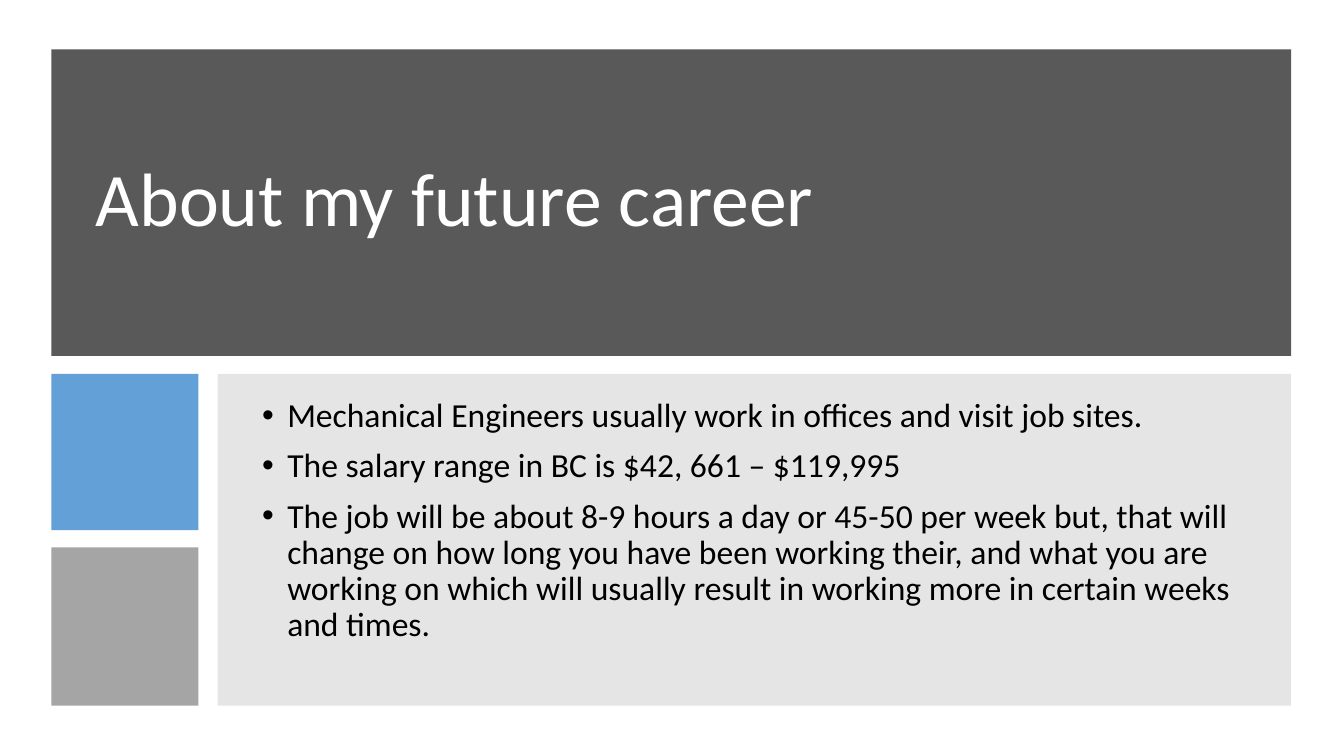
import pptx
import pptx.dml.color
import pptx.enum.shapes
import pptx.enum.text
import pptx.util
from lxml import etree
from pptx.oxml.ns import qn

Pt = pptx.util.Pt
RGBColor = pptx.dml.color.RGBColor
Anchor = pptx.enum.text.MSO_ANCHOR

WHITE = RGBColor(0xFF, 0xFF, 0xFF)
BLACK = RGBColor(0x00, 0x00, 0x00)
CHARCOAL = RGBColor(0x59, 0x59, 0x59)
BLUE = RGBColor(0x5B, 0x9B, 0xD5)
SILVER = RGBColor(0xA5, 0xA5, 0xA5)
GREY = RGBColor(0x80, 0x80, 0x80)

FONT = "Calibri"
CAREER_FACTS = [
    "Mechanical Engineers usually work in offices and visit job sites.",
    "The salary range in BC is $42, 661 – $119,995",
    "The job will be about 8-9 hours a day or 45-50 per week but, that will "
    "change on how long you have been working their, and what you are working "
    "on which will usually result in working more in certain weeks and times.",
]


def add_panel(slide, left, top, width, height, color, opacity=100):
    """Draw a plain rectangle, opacity in percent."""
    panel = slide.shapes.add_shape(
        pptx.enum.shapes.MSO_SHAPE.RECTANGLE,
        Pt(left), Pt(top), Pt(width), Pt(height))
    panel.shadow.inherit = False
    panel.line.fill.background()
    panel.fill.solid()
    panel.fill.fore_color.rgb = color
    if opacity < 100:
        fill_color = panel.fill._xPr.find(qn("a:solidFill"))[0]
        etree.SubElement(fill_color, qn("a:alpha"), val=str(opacity * 1000))


def fill_placeholder(slide, holder, box, lines, size, color, anchor):
    """Place the holder above the panels and write one paragraph per line."""
    slide.shapes._spTree.append(holder._element)
    holder.left, holder.top, holder.width, holder.height = map(Pt, box)
    frame = holder.text_frame
    frame.text = "\n".join(lines)
    frame.word_wrap = True
    frame.auto_size = pptx.enum.text.MSO_AUTO_SIZE.NONE
    frame.vertical_anchor = anchor
    for paragraph in frame.paragraphs:
        paragraph.alignment = pptx.enum.text.PP_ALIGN.LEFT
        paragraph.line_spacing = 0.9
        paragraph.font.name = FONT
        paragraph.font.size = Pt(size)
        paragraph.font.color.rgb = color
    return frame


def add_bullets(frame, indent, space_before):
    for paragraph in frame.paragraphs:
        paragraph.space_before = Pt(space_before)
        properties = paragraph._p.get_or_add_pPr()
        properties.set("marL", str(Pt(indent)))
        properties.set("indent", str(-Pt(indent)))
        bullet = etree.Element(qn("a:buChar"), char="•")
        properties.find(qn("a:spcBef")).addnext(bullet)


def main():
    deck = pptx.Presentation()
    deck.slide_width, deck.slide_height = Pt(960), Pt(540)
    slide = deck.slides.add_slide(deck.slide_layouts[1])
    title, facts = slide.placeholders

    # Panels: header, two accent blocks, text background
    add_panel(slide, 36.7, 35.3, 885.6, 218.9, CHARCOAL)
    add_panel(slide, 36.7, 267.1, 105.1, 111.6, BLUE, opacity=95)
    add_panel(slide, 36.7, 391, 105.1, 113, SILVER)
    add_panel(slide, 155.5, 267.1, 766.8, 236.9, GREY, opacity=20)

    # Title
    fill_placeholder(slide, title, (61.2, 59.8, 836.6, 168.5),
                     ["About my future career"], 54, WHITE, Anchor.MIDDLE)

    # Career facts
    frame = fill_placeholder(slide, facts, (180, 281, 717.1, 195.1),
                             CAREER_FACTS, 24, BLACK, Anchor.TOP)
    add_bullets(frame, indent=18, space_before=10)

    deck.save("out.pptx")


if __name__ == "__main__":
    main()
